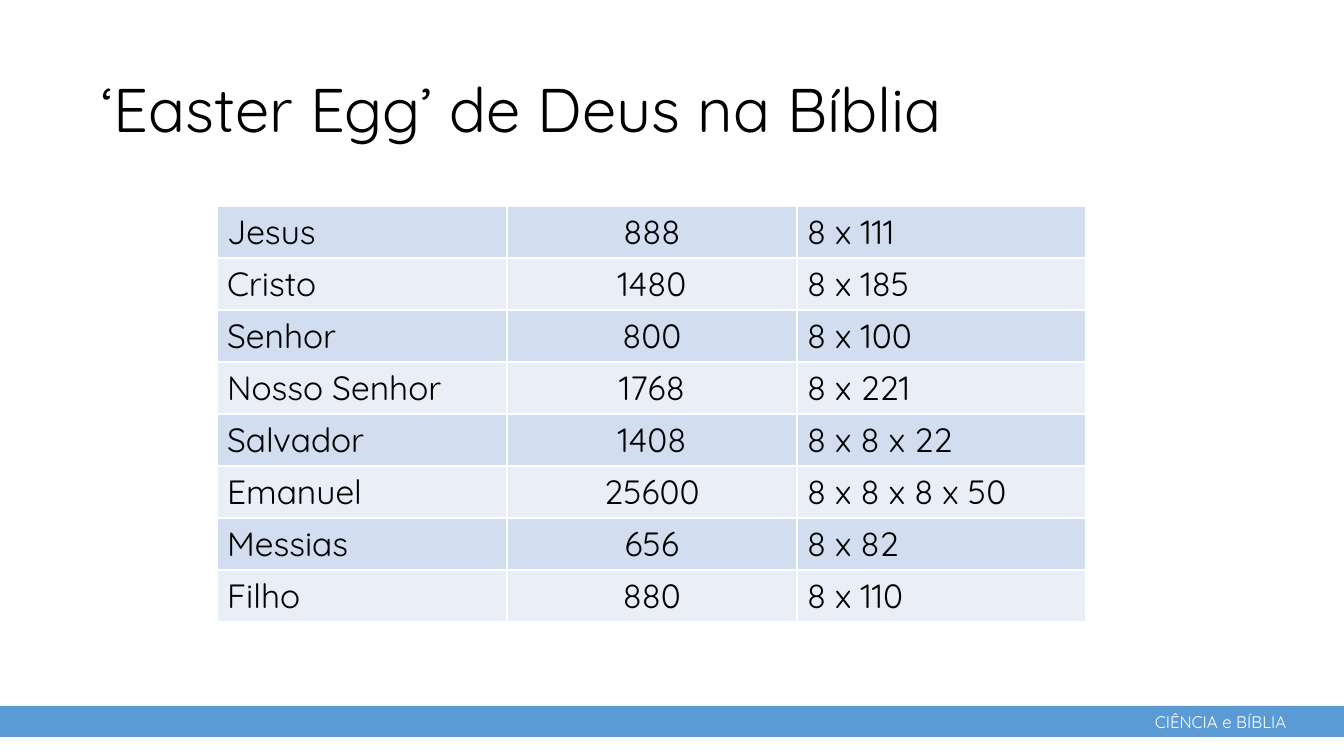
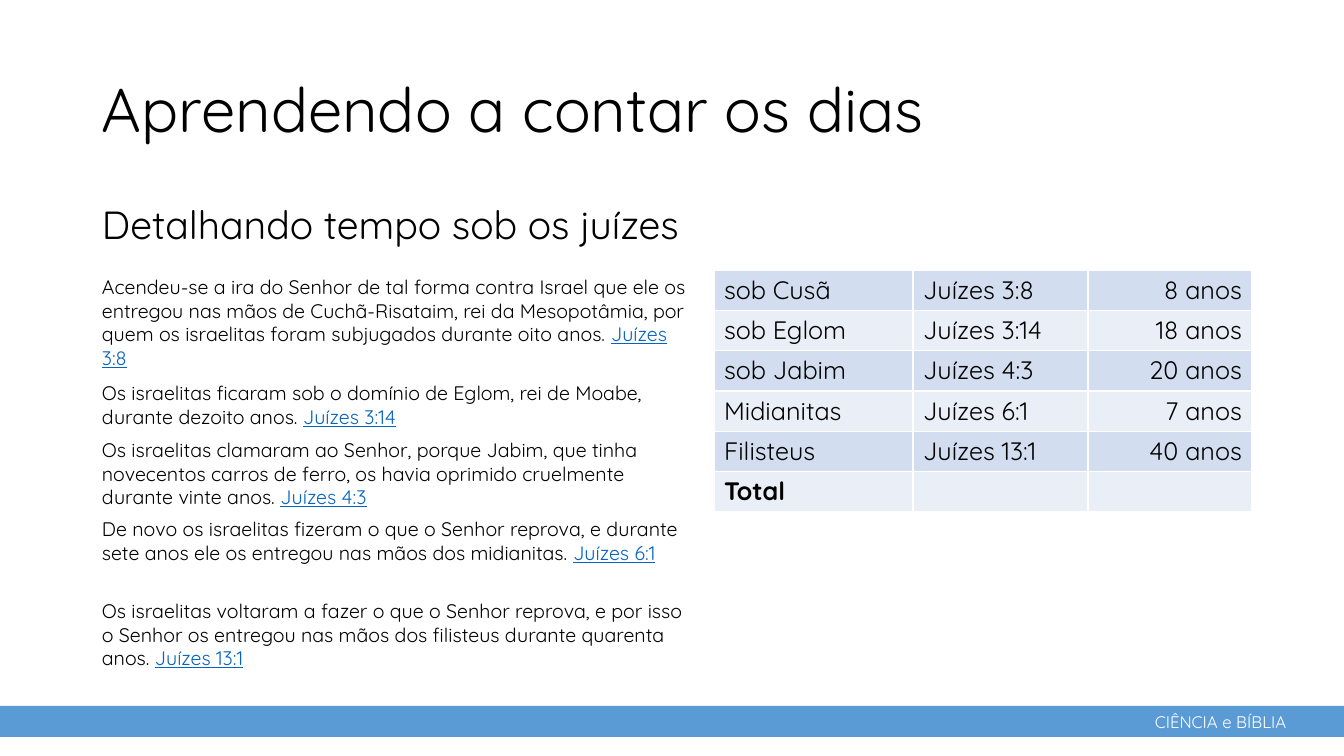
from dataclasses import dataclass
from itertools import cycle

from pptx import Presentation
from pptx.dml.color import RGBColor
from pptx.enum.shapes import MSO_SHAPE
from pptx.enum.text import MSO_ANCHOR, PP_ALIGN
from pptx.util import Emu, Pt

PAGE_WIDTH, PAGE_HEIGHT = 1344, 756
EMU_PER_PX = 12192000 / PAGE_WIDTH


@dataclass(frozen=True)
class Theme:
    font: str = "Quicksand"
    ink: RGBColor = RGBColor(0x00, 0x00, 0x00)
    paper: RGBColor = RGBColor(0xFF, 0xFF, 0xFF)
    band: RGBColor = RGBColor(0x5B, 0x9B, 0xD5)
    reference: RGBColor = RGBColor(0x05, 0x63, 0xC1)
    row_fills: tuple = (RGBColor(0xD2, 0xDE, 0xEF), RGBColor(0xEA, 0xEF, 0xF7))
    title_size: int = 44
    subtitle_size: int = 28
    large_table_size: int = 24
    small_table_size: int = 18
    verse_size: int = 14
    footer_size: int = 12


THEME = Theme()
LEFT, CENTER, RIGHT = PP_ALIGN.LEFT, PP_ALIGN.CENTER, PP_ALIGN.RIGHT

NAMES = [
    ("Jesus", "888", "8 x 111"),
    ("Cristo", "1480", "8 x 185"),
    ("Senhor", "800", "8 x 100"),
    ("Nosso Senhor", "1768", "8 x 221"),
    ("Salvador", "1408", "8 x 8 x 22"),
    ("Emanuel", "25600", "8 x 8 x 8 x 50"),
    ("Messias", "656", "8 x 82"),
    ("Filho", "880", "8 x 110"),
]

OPPRESSIONS = [
    ("sob Cusã", "Juízes 3:8", "8 anos"),
    ("sob Eglom", "Juízes 3:14", "18 anos"),
    ("sob Jabim", "Juízes 4:3", "20 anos"),
    ("Midianitas", "Juízes 6:1", "7 anos"),
    ("Filisteus", "Juízes 13:1", "40 anos"),
    ("Total", "", ""),
]

# Offset from the top of the column, verse text, reference
VERSES = [
    (0, "Acendeu-se a ira do Senhor de tal forma contra Israel que ele os entregou "
        "nas mãos de Cuchã-Risataim, rei da Mesopotâmia, por quem os israelitas foram "
        "subjugados durante oito anos. ", "Juízes 3:8"),
    (106, "Os israelitas ficaram sob o domínio de Eglom, rei de Moabe, durante "
          "dezoito anos. ", "Juízes 3:14"),
    (163, "Os israelitas clamaram ao Senhor, porque Jabim, que tinha novecentos carros "
          "de ferro, os havia oprimido cruelmente durante vinte anos. ", "Juízes 4:3"),
    (242, "De novo os israelitas fizeram o que o Senhor reprova, e durante sete anos "
          "ele os entregou nas mãos dos midianitas. ", "Juízes 6:1"),
    (324, "Os israelitas voltaram a fazer o que o Senhor reprova, e por isso o Senhor "
          "os entregou nas mãos dos filisteus durante quarenta anos. ", "Juízes 13:1"),
]


def px(length):
    return Emu(round(length * EMU_PER_PX))


def style(para, size, color=THEME.ink, bold=False):
    font = para.font
    font.name, font.size, font.bold = THEME.font, Pt(size), bold
    font.color.rgb = color


def add_text(page, box, text, size, color=THEME.ink, anchor=MSO_ANCHOR.TOP, spacing=1.0):
    """Place one wrapped paragraph in the box and return it."""
    frame = page.shapes.add_textbox(*map(px, box)).text_frame
    frame.word_wrap = True
    frame.vertical_anchor = anchor
    para = frame.paragraphs[0]
    para.line_spacing = spacing
    para.add_run().text = text
    style(para, size, color)
    return para


def add_footer(page, box):
    left, top, width, height = box
    band = page.shapes.add_shape(MSO_SHAPE.RECTANGLE, *map(px, box))
    band.shadow.inherit = False
    band.fill.solid()
    band.fill.fore_color.rgb = THEME.band
    band.line.fill.background()
    label_box = (left + width - 199, top + 1, 160, height - 1)
    add_text(page, label_box, "CIÊNCIA e BÍBLIA", THEME.footer_size, THEME.paper)


def add_page(deck, title):
    """Add a blank page carrying the shared footer and title."""
    page = deck.slides.add_slide(deck.slide_layouts[6])
    add_footer(page, (0, 706, PAGE_WIDTH, 31))
    add_text(page, (92, 40, 1159, 146), title, THEME.title_size,
             anchor=MSO_ANCHOR.MIDDLE, spacing=0.9)
    return page


def add_banded_table(page, box, rows, column_widths, alignments, size, margin):
    """Fill the box with equal rows in alternating fills; a Total row is bold."""
    table = page.shapes.add_table(len(rows), len(column_widths), *map(px, box)).table
    table.first_row = table.horz_banding = False
    for column, width in zip(table.columns, column_widths):
        column.width = px(width)
    for row, texts, fill in zip(table.rows, rows, cycle(THEME.row_fills)):
        row.height = px(box[3] / len(rows))
        for cell, text, alignment in zip(row.cells, texts, alignments):
            cell.fill.solid()
            cell.fill.fore_color.rgb = fill
            cell.margin_top = cell.margin_bottom = px(margin)
            para = cell.text_frame.paragraphs[0]
            para.alignment = alignment
            if text:
                para.add_run().text = text
            style(para, size, bold=text == "Total")


def add_verses(page, box):
    left, top, width, height = box
    ends = [offset for offset, _, _ in VERSES[1:]] + [height]
    for (offset, verse, reference), end in zip(VERSES, ends):
        para = add_text(page, (left, top + offset, width, end - offset),
                        verse, THEME.verse_size)
        span = para.add_run()
        span.text = reference
        span.font.underline = True
        span.font.color.rgb = THEME.reference


def add_names_page(deck):
    page = add_page(deck, "‘Easter Egg’ de Deus na Bíblia")
    add_banded_table(page, (217, 206, 869, 416), NAMES, (290, 290, 289),
                     (LEFT, CENTER, LEFT), THEME.large_table_size, margin=5)


def add_judges_page(deck):
    page = add_page(deck, "Aprendendo a contar os dias")
    add_text(page, (92, 186, 1196, 87), "Detalhando tempo sob os juízes",
             THEME.subtitle_size, spacing=1.2)
    add_verses(page, (92, 270, 611, 406))
    add_banded_table(page, (714, 270, 538, 242), OPPRESSIONS, (199, 175, 164),
                     (LEFT, LEFT, RIGHT), THEME.small_table_size, margin=4)


def main():
    deck = Presentation()
    deck.slide_width, deck.slide_height = px(PAGE_WIDTH), px(PAGE_HEIGHT)
    add_names_page(deck)
    add_judges_page(deck)
    deck.save("out.pptx")


if __name__ == "__main__":
    main()
